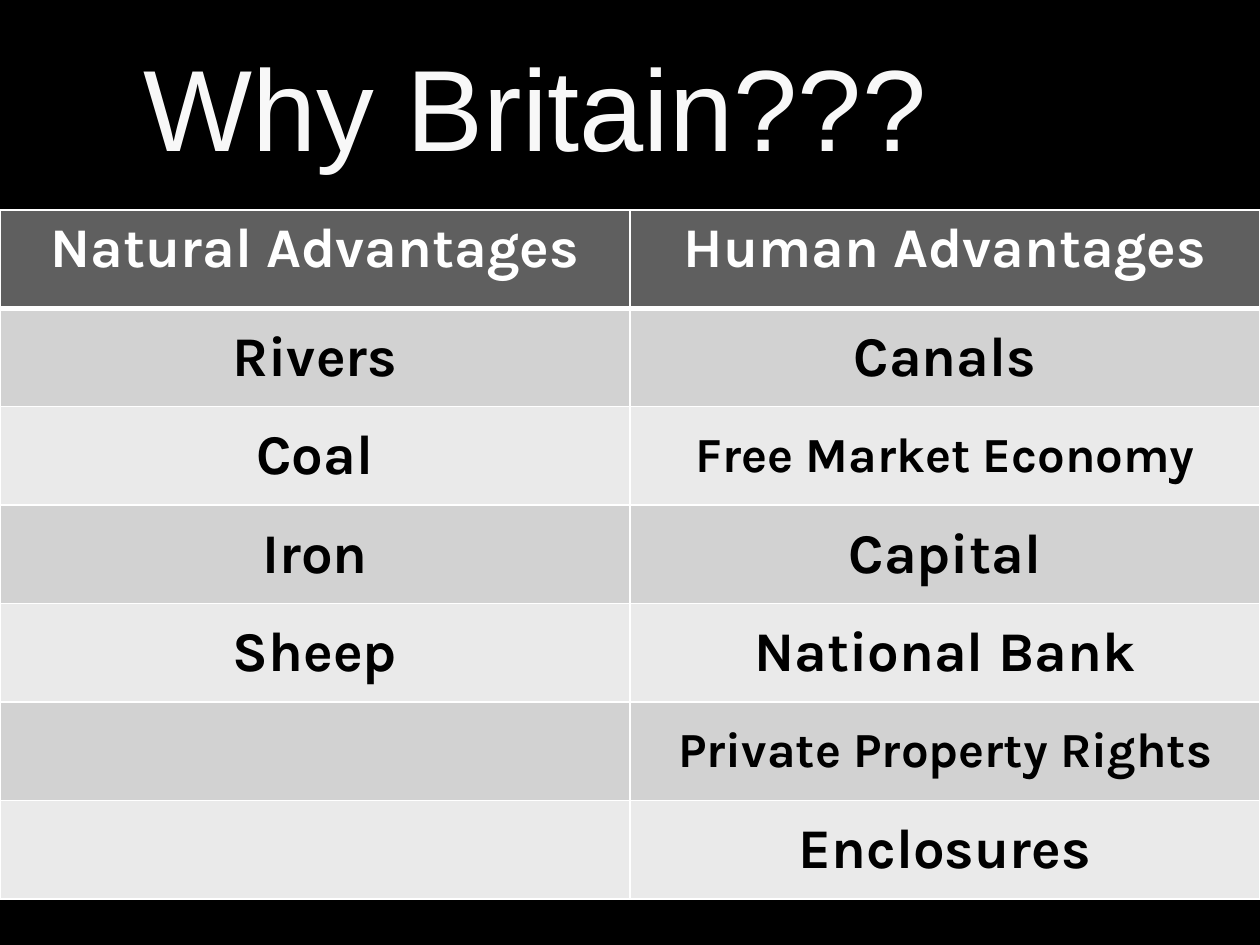
from dataclasses import dataclass

from lxml import etree
from pptx import Presentation
from pptx.dml.color import RGBColor
from pptx.enum import text
from pptx.oxml import ns
from pptx.util import Cm, Pt


@dataclass(frozen=True)
class Theme:
    background: str = "000000"
    title: str = "F8F8F8"
    header_fill: str = "5F5F5F"
    header_text: str = "FFFFFF"
    body_text: str = "000000"
    bands: tuple = ("D2D2D2", "EAEAEA")
    border: str = "FFFFFF"
    title_font: str = "Arial"
    table_font: str = "Karla"
    title_size: int = 66
    entry_size: int = 32
    long_entry_size: int = 28


@dataclass(frozen=True)
class Entry:
    words: str
    size: int


THEME = Theme()
NORMAL, LONG = THEME.entry_size, THEME.long_entry_size
COLUMNS = (
    (
        Entry("Natural Advantages", NORMAL),
        Entry("Rivers", NORMAL),
        Entry("Coal", NORMAL),
        Entry("Iron", NORMAL),
        Entry("Sheep", NORMAL),
    ),
    (
        Entry("Human Advantages", NORMAL),
        Entry("Canals", NORMAL),
        Entry("Free Market Economy", LONG),
        Entry("Capital", NORMAL),
        Entry("National Bank", NORMAL),
        Entry("Private Property Rights", LONG),
        Entry("Enclosures", NORMAL),
    ),
)
ROW_COUNT = max(len(column) for column in COLUMNS)
PAGE_WIDTH, PAGE_HEIGHT = Cm(25.4), Cm(19.05)
TABLE_TOP, TABLE_HEIGHT = Cm(4.23), Cm(13.89)


def write_centred(frame, words: str, font: str, size: int, colour: str, bold: bool = False) -> None:
    para = frame.paragraphs[0]
    para.alignment = text.PP_ALIGN.CENTER
    span = para.add_run()
    span.text = words
    span.font.name = font
    span.font.size = Pt(size)
    span.font.bold = bold
    span.font.color.rgb = RGBColor.from_string(colour)


def add_borders(cell, top: int, bottom: int) -> None:
    """Draw the four cell edges; widths are in points."""
    properties = cell._tc.get_or_add_tcPr()
    edges = (("lnL", 1), ("lnR", 1), ("lnT", top), ("lnB", bottom))
    for position, (tag, width) in enumerate(edges):
        line = etree.Element(ns.qn(f"a:{tag}"), w=str(Pt(width)))
        fill = etree.SubElement(line, ns.qn("a:solidFill"))
        etree.SubElement(fill, ns.qn("a:srgbClr"), val=THEME.border)
        properties.insert(position, line)


def add_title(page) -> None:
    box = page.shapes.add_textbox(0, 0, Cm(21.59), TABLE_TOP)
    frame = box.text_frame
    frame.word_wrap = True
    frame.vertical_anchor = text.MSO_ANCHOR.MIDDLE
    write_centred(frame, "Why Britain???", THEME.title_font, THEME.title_size, THEME.title)


def style_cell(cell, row: int) -> None:
    header = row == 0
    cell.fill.solid()
    colour = THEME.header_fill if header else THEME.bands[(row - 1) % 2]
    cell.fill.fore_color.rgb = RGBColor.from_string(colour)
    if not header:
        cell.vertical_anchor = text.MSO_ANCHOR.MIDDLE
    add_borders(cell, top=3 if row == 1 else 1, bottom=3 if header else 1)


def add_advantages(page) -> None:
    table = page.shapes.add_table(
        ROW_COUNT, len(COLUMNS), 0, TABLE_TOP, PAGE_WIDTH, TABLE_HEIGHT
    ).table
    for column, entries in enumerate(COLUMNS):
        for row in range(ROW_COUNT):
            style_cell(table.cell(row, column), row)
        for row, entry in enumerate(entries):
            colour = THEME.body_text if row else THEME.header_text
            frame = table.cell(row, column).text_frame
            write_centred(frame, entry.words, THEME.table_font, entry.size, colour, bold=True)


def main() -> None:
    deck = Presentation()
    deck.slide_width, deck.slide_height = PAGE_WIDTH, PAGE_HEIGHT
    page = deck.slides.add_slide(deck.slide_layouts[6])
    page.background.fill.solid()
    page.background.fill.fore_color.rgb = RGBColor.from_string(THEME.background)
    add_title(page)
    add_advantages(page)
    deck.save("out.pptx")


if __name__ == "__main__":
    main()
